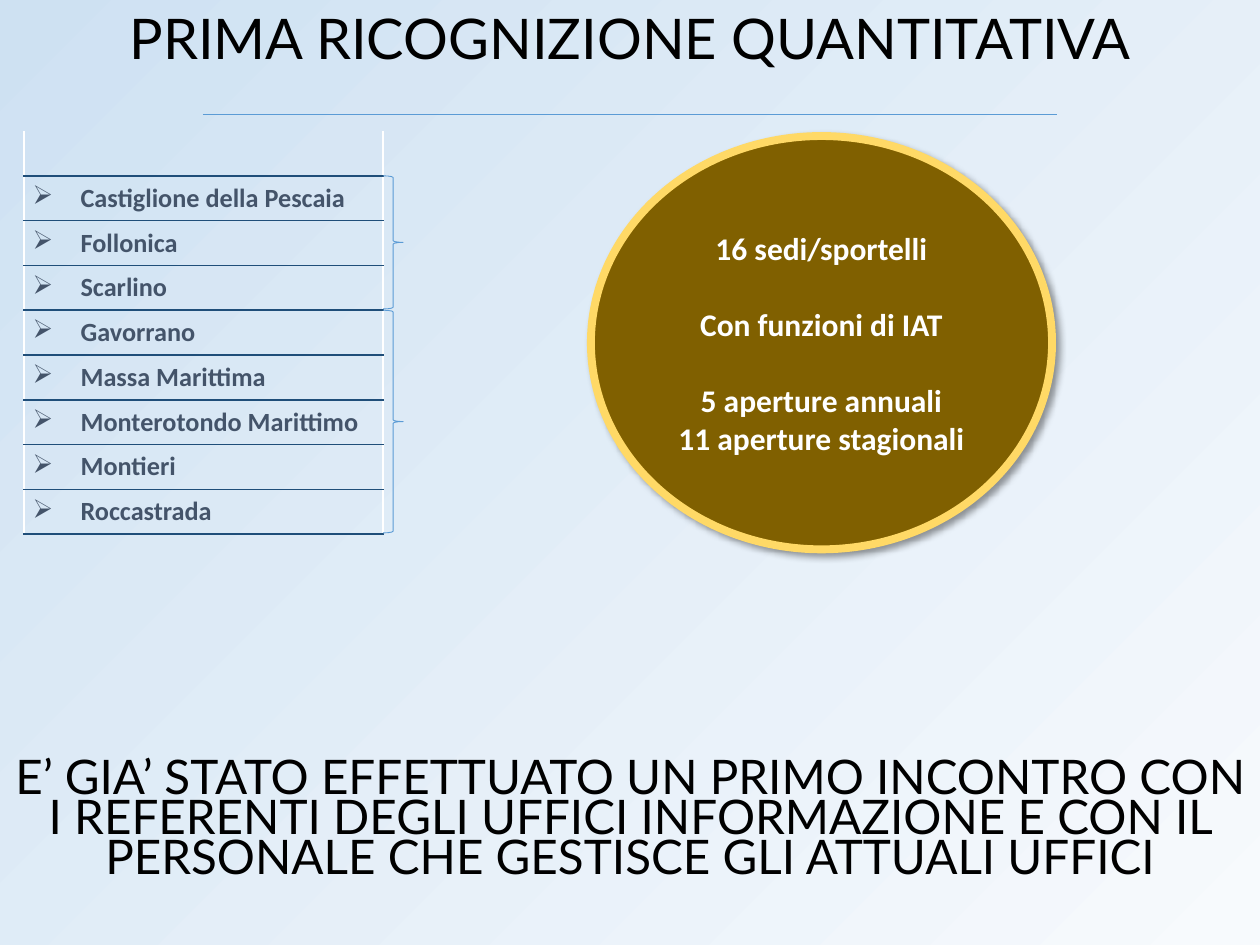
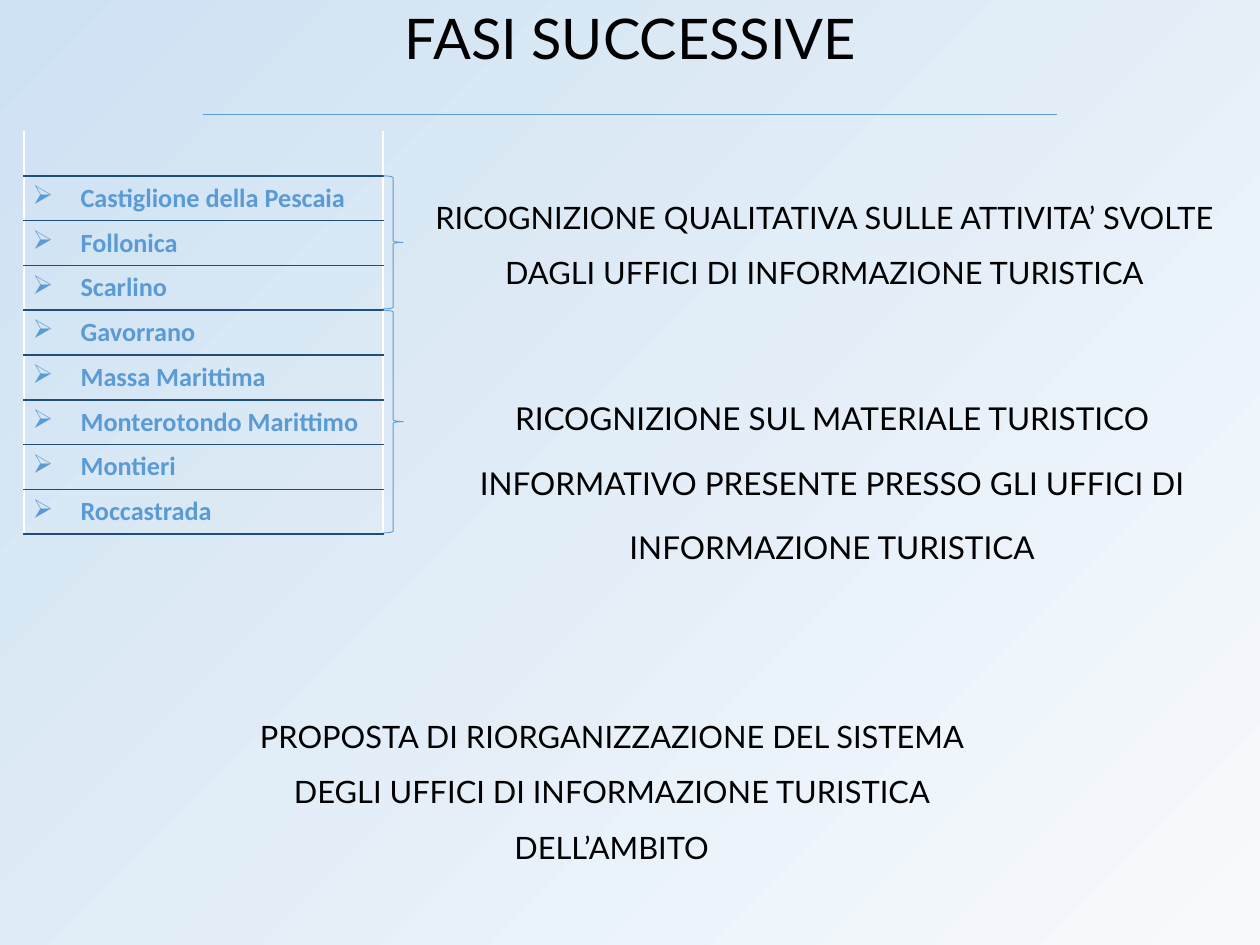
from lxml import etree
from pptx import Presentation, util as u
from pptx.dml.color import RGBColor
from pptx.enum import shapes, text
from pptx.oxml import ns

BLACK = RGBColor(0x00, 0x00, 0x00)
WHITE = RGBColor(0xFF, 0xFF, 0xFF)
PALE_BLUE = RGBColor(0xF7, 0xFA, 0xFD)
SKY_BLUE = RGBColor(0xCE, 0xE1, 0xF2)
BLUE = RGBColor(0x5B, 0x9B, 0xD5)
NAVY = RGBColor(0x1F, 0x4E, 0x79)
SLATE = RGBColor(0x44, 0x54, 0x6A)
BROWN = RGBColor(0x80, 0x60, 0x00)
GOLD = RGBColor(0xFF, 0xD9, 0x66)

TOWNS = ["Castiglione della Pescaia", "Follonica", "Scarlino", "Gavorrano",
         "Massa Marittima", "Monterotondo Marittimo", "Montieri", "Roccastrada"]
TABLE_LEFT, TABLE_TOP, TABLE_WIDTH, TABLE_HEIGHT = 0.19, 1.04, 2.85, 3.2
ROW_HEIGHT = TABLE_HEIGHT / (len(TOWNS) + 1)
BRACES = [(1, 3), (4, 5)]  # first row, number of rows


def write(frame, lines, font="Lato", size=18, color=BLACK, bold=False,
          align=text.PP_ALIGN.CENTER, anchor=text.MSO_ANCHOR.TOP,
          spacing=None, gaps=()):
    """Fill a text frame; gaps gives the space before each line, in points."""
    frame.word_wrap = True
    frame.auto_size = text.MSO_AUTO_SIZE.NONE
    frame.vertical_anchor = anchor
    for index, line in enumerate(lines):
        paragraph = frame.paragraphs[0] if index == 0 else frame.add_paragraph()
        paragraph.alignment = align
        if spacing:
            paragraph.line_spacing = spacing
        if gaps:
            paragraph.space_before = u.Pt(gaps[index])
        run = paragraph.add_run()
        run.text = line
        run.font.name = font
        run.font.size = u.Pt(size)
        run.font.bold = bold
        run.font.color.rgb = color


def set_border(cell, side, color):
    """Draw one cell border, or hide it when color is None."""
    line = etree.SubElement(cell._tc.get_or_add_tcPr(), ns.qn("a:" + side), w="12700")
    if color is None:
        etree.SubElement(line, ns.qn("a:noFill"))
    else:
        fill = etree.SubElement(line, ns.qn("a:solidFill"))
        etree.SubElement(fill, ns.qn("a:srgbClr"), val=str(color))


presentation = Presentation()
presentation.slide_width = u.Inches(10)
presentation.slide_height = u.Inches(7.5)

# Shared background, running from bottom right to top left
background = presentation.slide_master.background.fill
background.gradient()
background.gradient_angle = 135
for stop, color in zip(background.gradient_stops, (PALE_BLUE, SKY_BLUE)):
    stop.color.rgb = color

# Title, rule, table of towns and braces on both slides
slides = []
for title_text, town_color in [("PRIMA RICOGNIZIONE QUANTITATIVA", SLATE),
                               ("FASI SUCCESSIVE", BLUE)]:
    slide = presentation.slides.add_slide(presentation.slide_layouts[5])
    slides.append(slide)

    title = slide.shapes.title
    title.left, title.top = u.Inches(0.01), u.Inches(0.04)
    title.width, title.height = u.Inches(9.99), u.Inches(1.07)
    write(title.text_frame, [title_text], size=32, spacing=0.9)

    rule = slide.shapes.add_connector(
        shapes.MSO_CONNECTOR.STRAIGHT,
        u.Inches(1.61), u.Inches(0.91), u.Inches(8.39), u.Inches(0.91))
    rule.line.color.rgb = BLUE
    rule.line.width = u.Pt(0.5)
    etree.SubElement(rule._element.spPr, ns.qn("a:effectLst"))

    table = slide.shapes.add_table(
        len(TOWNS) + 1, 1, u.Inches(TABLE_LEFT), u.Inches(TABLE_TOP),
        u.Inches(TABLE_WIDTH), u.Inches(TABLE_HEIGHT)).table
    table.first_row = table.horz_banding = False
    for row, town in enumerate([None] + TOWNS):
        cell = table.cell(row, 0)
        cell.margin_left = cell.margin_right = u.Inches(0.07)
        cell.margin_top = cell.margin_bottom = u.Inches(0.04 if town else 0)
        for side, color in [("lnL", WHITE), ("lnR", WHITE),
                            ("lnT", NAVY if town else None), ("lnB", NAVY)]:
            set_border(cell, side, color)
        cell.fill.background()
        if town:
            cell.vertical_anchor = text.MSO_ANCHOR.MIDDLE
            write(cell.text_frame, [town], font="Calibri", size=15, bold=True,
                  color=town_color, align=text.PP_ALIGN.LEFT,
                  anchor=text.MSO_ANCHOR.MIDDLE)
            properties = cell.text_frame.paragraphs[0]._p.get_or_add_pPr()
            properties.set("marL", str(u.Inches(0.38)))
            properties.set("indent", str(-u.Inches(0.38)))
            etree.SubElement(properties, ns.qn("a:buChar"), char="➢")

    for first_row, row_count in BRACES:
        brace = slide.shapes.add_shape(
            shapes.MSO_SHAPE.RIGHT_BRACE,
            u.Inches(TABLE_LEFT + TABLE_WIDTH),
            u.Inches(TABLE_TOP + first_row * ROW_HEIGHT),
            u.Inches(0.16), u.Inches(row_count * ROW_HEIGHT - 0.01))
        brace.shadow.inherit = False
        brace.fill.background()
        brace.line.color.rgb = BLUE
        brace.line.width = u.Pt(0.5)

survey_slide, phases_slide = slides

# Survey slide: ellipse with the office counts
ellipse = survey_slide.shapes.add_shape(
    shapes.MSO_SHAPE.OVAL, u.Inches(4.69), u.Inches(1.08), u.Inches(3.66), u.Inches(3.28))
ellipse.fill.solid()
ellipse.fill.fore_color.rgb = BROWN
ellipse.line.color.rgb = GOLD
ellipse.line.width = u.Pt(4.5)
ellipse.shadow.inherit = False
shadow = etree.SubElement(
    ellipse._element.spPr.find(ns.qn("a:effectLst")), ns.qn("a:outerShdw"),
    blurRad=str(u.Pt(4)), dist=str(u.Pt(3)), dir="2700000", rotWithShape="0")
shadow_color = etree.SubElement(shadow, ns.qn("a:srgbClr"), val=str(BLACK))
etree.SubElement(shadow_color, ns.qn("a:alpha"), val="40000")
write(ellipse.text_frame,
      ["16 sedi/sportelli", "Con funzioni di IAT", "5 aperture annuali", "11 aperture stagionali"],
      font="Calibri", color=WHITE, bold=True,
      anchor=text.MSO_ANCHOR.MIDDLE, gaps=(0, 22, 22, 0))

# Statements: slide, box, top inset, size, line spacing, wording
for slide, box, inset, size, spacing, wording in [
    (survey_slide, (0.01, 5.52, 9.99, 1.44), 0.53, 27.2, 0.7,
     "E’ GIA’ STATO EFFETTUATO UN PRIMO INCONTRO CON I REFERENTI DEGLI UFFICI "
     "INFORMAZIONE E CON IL PERSONALE CHE GESTISCE GLI ATTUALI UFFICI"),
    (phases_slide, (3.3, 1.38, 6.49, 1.07), 0.05, 17.6, 1.5,
     "RICOGNIZIONE QUALITATIVA SULLE ATTIVITA’ SVOLTE DAGLI UFFICI DI "
     "INFORMAZIONE TURISTICA"),
    (phases_slide, (3.3, 2.91, 6.61, 1.49), 0.05, 18, 1.7,
     "RICOGNIZIONE SUL MATERIALE TURISTICO INFORMATIVO PRESENTE PRESSO GLI "
     "UFFICI DI INFORMAZIONE TURISTICA"),
    (phases_slide, (1.61, 5.5, 6.49, 1.07), 0.05, 17.6, 1.5,
     "PROPOSTA DI RIORGANIZZAZIONE DEL SISTEMA DEGLI UFFICI DI INFORMAZIONE "
     "TURISTICA DELL’AMBITO"),
]:
    statement = slide.shapes.add_textbox(*map(u.Inches, box))
    statement.text_frame.margin_top = u.Inches(inset)
    statement.text_frame.margin_bottom = 0
    write(statement.text_frame, [wording], size=size, spacing=spacing)

presentation.save("out.pptx")
